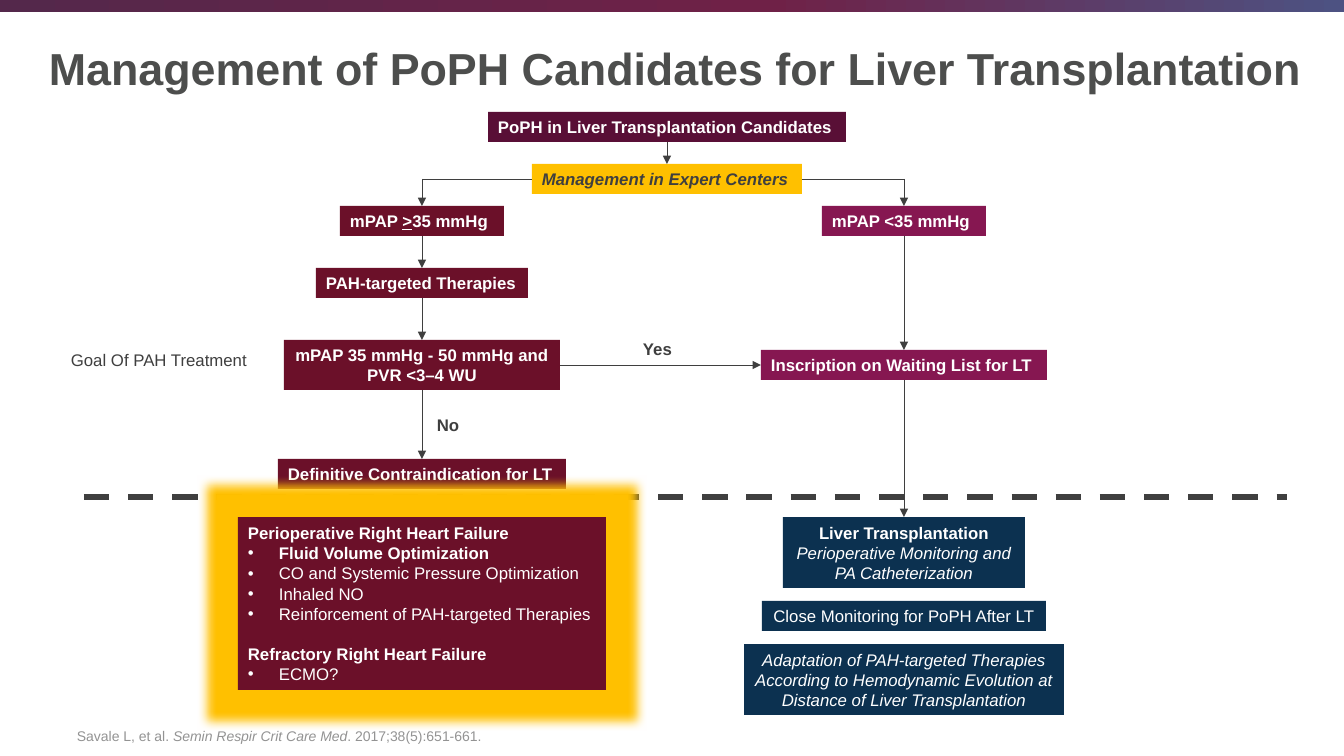
from copy import deepcopy

from lxml.etree import SubElement
from pptx import Presentation
from pptx.dml.color import RGBColor
from pptx.enum.dml import MSO_LINE
from pptx.enum.shapes import MSO_CONNECTOR, MSO_SHAPE
from pptx.enum.text import MSO_ANCHOR, PP_ALIGN
from pptx.oxml.ns import qn
from pptx.util import Pt

PX = 914400 / 100.8
WHITE = RGBColor(0xFF, 0xFF, 0xFF)
DARK = RGBColor(0x3F, 0x3F, 0x3F)
TITLE_GREY = RGBColor(0x4D, 0x4E, 0x4D)
SOURCE_GREY = RGBColor(0x93, 0x93, 0x93)
PLUM = RGBColor(0x59, 0x0F, 0x36)
GOLD = RGBColor(0xFF, 0xC0, 0x00)
MAROON = RGBColor(0x6B, 0x10, 0x29)
MAGENTA = RGBColor(0x86, 0x17, 0x51)
NAVY = RGBColor(0x0C, 0x31, 0x50)
BAR_STOPS = [(0, RGBColor(0x54, 0x28, 0x4B)), (0.57, RGBColor(0x6F, 0x21, 0x47)),
             (1, RGBColor(0x4D, 0x52, 0x82))]
LEFT, MIDDLE, RIGHT = 422, 667, 904  # column centres
BRANCH_Y = 179
TOP, LEFT_SIDE, BOTTOM, RIGHT_SIDE = range(4)

prs = Presentation()
prs.slide_width, prs.slide_height = round(1344 * PX), round(756 * PX)
slide = prs.slides.add_slide(prs.slide_layouts[6])
shapes = slide.shapes


def write(s, paragraphs, color, size=12, align=PP_ALIGN.LEFT,
          anchor=MSO_ANCHOR.MIDDLE, wrap=True):
    """Fill s with paragraphs of (text, style) runs; style letters are b, i and u."""
    tf = s.text_frame
    tf.word_wrap = wrap
    tf.vertical_anchor = anchor
    for i, runs in enumerate(paragraphs):
        p = tf.add_paragraph() if i else tf.paragraphs[0]
        p.alignment = align
        for text, style in runs:
            r = p.add_run()
            r.text = text
            font = {"name": "Arial", "size": Pt(size), "bold": "b" in style,
                    "italic": "i" in style, "underline": "u" in style}
            for name, value in font.items():
                setattr(r.font, name, value)
            r.font.color.rgb = color


def line(x1, y1, x2, y2, width=0.5, arrow=False):
    c = shapes.add_connector(MSO_CONNECTOR.STRAIGHT, *(round(v * PX) for v in (x1, y1, x2, y2)))
    c.line.color.rgb = DARK
    c.line.width = Pt(width)
    if arrow:
        SubElement(c.line._get_or_add_ln(), qn("a:tailEnd"), type="triangle")
    SubElement(c._element.spPr, qn("a:effectLst"))
    return c


# Top bar
bar = shapes.add_shape(MSO_SHAPE.RECTANGLE, 0, 0, prs.slide_width, round(12 * PX))
bar.shadow.inherit = False
bar.line.fill.background()
bar.fill.gradient()
bar.fill.gradient_angle = 0
stop_list = bar._element.spPr.find(".//" + qn("a:gsLst"))
stop_list.append(deepcopy(stop_list[0]))
for stop, (position, color) in zip(bar.fill.gradient_stops, BAR_STOPS):
    stop.position = position
    stop.color.rgb = color

# Title, labels and source
texts = [
    (39, 11, 1277, 114, [[("Management of PoPH Candidates for Liver Transplantation", "b")]],
     TITLE_GREY, {"size": 32}),
    (427, 410, 43, 30, [[("No", "b")]], DARK, {"wrap": False}),
    (633, 334, 49, 30, [[("Yes", "b")]], DARK, {"wrap": False}),
    (61, 345, 199, 30, [[("Goal Of PAH Treatment", "")]], DARK, {"wrap": False}),
    (67, 701, 1184, 48, [[("Savale L, et al. ", ""), ("Semin Respir Crit Care Med", "i"),
                          (". 2017;38(5):651-661.", "")]],
     SOURCE_GREY, {"size": 10, "anchor": MSO_ANCHOR.BOTTOM}),
]
for *place, paragraphs, color, options in texts:
    s = shapes.add_textbox(*(round(v * PX) for v in place))
    write(s, paragraphs, color, **options)

line(84, 497, 1287, 497, width=4.5).line.dash_style = MSO_LINE.DASH

# Flowchart boxes: column centre, top, width, height
boxes = {
    "candidates": (MIDDLE, 112, 358, 30, PLUM, PP_ALIGN.LEFT,
                   [[("PoPH in Liver Transplantation Candidates", "b")]]),
    "centers": (MIDDLE, 164, 270, 30, GOLD, PP_ALIGN.LEFT,
                [[("Management in Expert Centers", "bi")]]),
    "high": (LEFT, 206, 164, 30, MAROON, PP_ALIGN.LEFT,
             [[("mPAP ", "b"), (">", "bu"), ("35 mmHg", "b")]]),
    "low": (RIGHT, 206, 164, 30, MAGENTA, PP_ALIGN.LEFT, [[("mPAP <35 mmHg", "b")]]),
    "therapies": (LEFT, 268, 212, 30, MAROON, PP_ALIGN.LEFT,
                  [[("PAH-targeted Therapies", "b")]]),
    "goal": (LEFT, 340, 276, 50, MAROON, PP_ALIGN.CENTER,
             [[("mPAP 35 mmHg - 50 mmHg and", "b")], [("PVR <3–4 WU", "b")]]),
    "contraindication": (LEFT, 459, 288, 30, MAROON, PP_ALIGN.LEFT,
                         [[("Definitive Contraindication for LT", "b")]]),
    "waiting": (RIGHT, 350, 286, 30, MAGENTA, PP_ALIGN.LEFT,
                [[("Inscription on Waiting List for LT", "b")]]),
    "transplant": (RIGHT, 517, 242, 71, NAVY, PP_ALIGN.CENTER,
                   [[("Liver Transplantation", "b")], [("Perioperative Monitoring and", "i")],
                    [("PA Catheterization", "i")]]),
    "monitoring": (RIGHT, 601, 284, 30, NAVY, PP_ALIGN.CENTER,
                   [[("Close Monitoring for PoPH After LT", "")]]),
    "adaptation": (RIGHT, 644, 320, 71, NAVY, PP_ALIGN.CENTER,
                   [[("Adaptation of PAH-targeted Therapies", "i")],
                    [("According to Hemodynamic Evolution at", "i")],
                    [("Distance of Liver Transplantation", "i")]]),
    "failure": (LEFT, 517, 368, 173, MAROON, PP_ALIGN.LEFT,
                [[("Perioperative Right Heart Failure", "b")],
                 [("Fluid Volume Optimization", "b")],
                 [("CO and Systemic Pressure Optimization", "")],
                 [("Inhaled NO", "")],
                 [("Reinforcement of PAH-targeted Therapies", "")],
                 [("Refractory Right Heart Failure", "b")],
                 [("ECMO?", "")]]),
}
box = {}
for name, (center, top, width, height, fill, align, paragraphs) in boxes.items():
    place = (center - width // 2, top, width, height)
    s = shapes.add_shape(MSO_SHAPE.RECTANGLE, *(round(v * PX) for v in place))
    s.shadow.inherit = False
    s.fill.solid()
    s.fill.fore_color.rgb = fill
    s.line.fill.background()
    write(s, paragraphs, DARK if fill == GOLD else WHITE, align=align)
    box[name] = s

# Bullets and glow of the heart failure box
indent = round(31 * PX)
for p in box["failure"].text_frame.paragraphs:
    if p.text.endswith("Heart Failure"):
        continue
    pPr = p._p.get_or_add_pPr()
    pPr.set("marL", str(indent))
    pPr.set("indent", str(-indent))
    SubElement(pPr, qn("a:buFont"), typeface="Arial")
    SubElement(pPr, qn("a:buChar"), char="•")
box["failure"].text_frame.paragraphs[5].space_before = Pt(14.4)
effects = box["failure"]._element.spPr.find(qn("a:effectLst"))
glow = SubElement(effects, qn("a:glow"), rad=str(round(21 * PX)))
SubElement(glow, qn("a:srgbClr"), val=str(GOLD))

# Arrows between boxes
links = [
    ("candidates", BOTTOM, "centers", TOP),
    ("high", BOTTOM, "therapies", TOP),
    ("therapies", BOTTOM, "goal", TOP),
    ("goal", BOTTOM, "contraindication", TOP),
    ("goal", RIGHT_SIDE, "waiting", LEFT_SIDE),
    ("low", BOTTOM, "waiting", TOP),
    ("waiting", BOTTOM, "transplant", TOP),
]
for start, start_side, end, end_side in links:
    c = line(0, 0, 0, 0, arrow=True)
    c.begin_connect(box[start], start_side)
    c.end_connect(box[end], end_side)

# Branches from the expert centers
for side, column, target in [(LEFT_SIDE, LEFT, "high"), (RIGHT_SIDE, RIGHT, "low")]:
    line(MIDDLE, BRANCH_Y, column, BRANCH_Y).begin_connect(box["centers"], side)
    line(column, BRANCH_Y, column, 206, arrow=True).end_connect(box[target], TOP)

prs.save("out.pptx")
